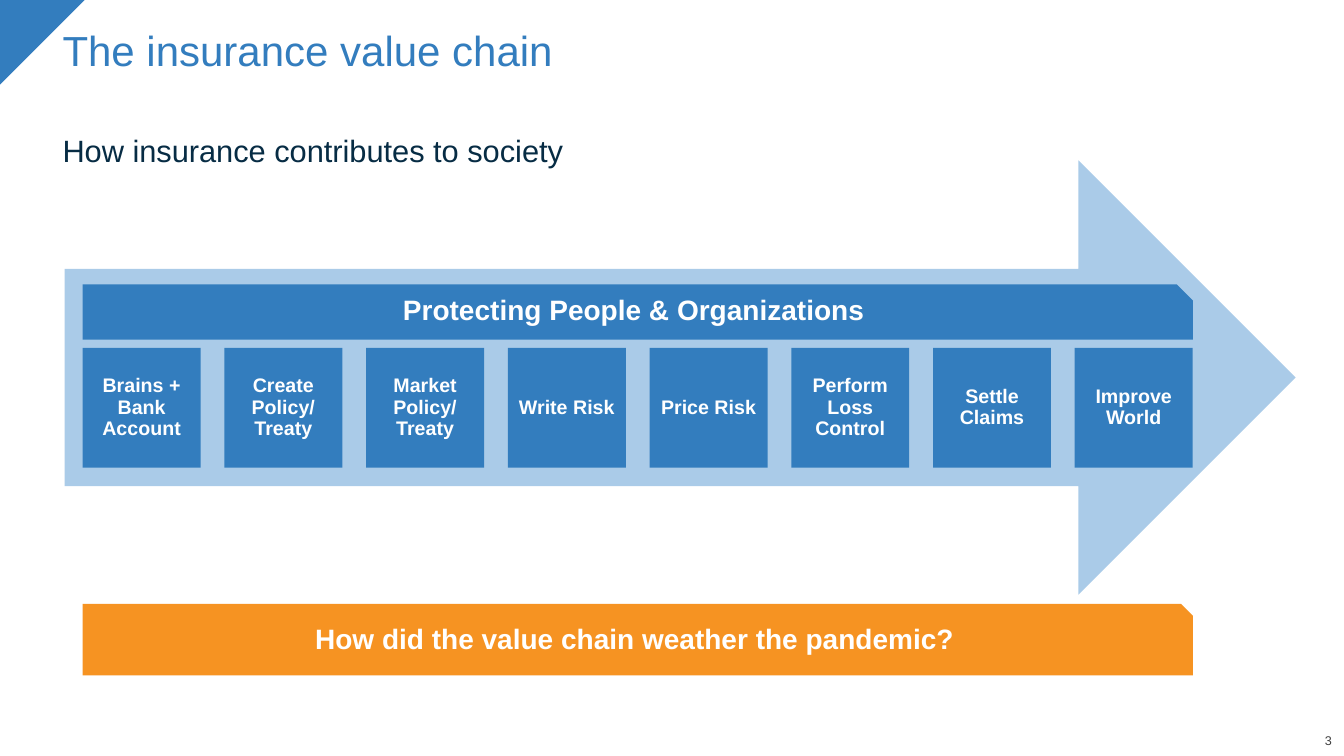
from pptx import Presentation
from pptx.dml.color import RGBColor
from pptx.enum.shapes import MSO_SHAPE as Shape
from pptx.enum.text import MSO_ANCHOR as Anchor, MSO_AUTO_SIZE as AutoSize, PP_ALIGN as Align
from pptx.oxml.ns import qn
from pptx.util import Inches, Pt

BLUE, PALE_BLUE, ORANGE = "337DBE", "AACBE8", "F69322"
NAVY, GREY, WHITE = "072C44", "404040", "FFFFFF"


def add_block(kind, left, top, width, height, color):
    block = slide.shapes.add_shape(
        kind, Inches(left), Inches(top), Inches(width), Inches(height))
    block.shadow.inherit = False
    block.fill.solid()
    block.fill.fore_color.rgb = RGBColor.from_string(color)
    block.line.fill.background()
    return block


def write(box, text, size, color, align, anchor, margins=(0.1, 0.05, 0.1, 0.05), bold=False):
    """Fill a box with one paragraph; margins run left, top, right, bottom."""
    frame = box.text_frame
    frame.text = text
    frame.word_wrap = True
    frame.auto_size = AutoSize.NONE
    frame.vertical_anchor = anchor
    (frame.margin_left, frame.margin_top,
     frame.margin_right, frame.margin_bottom) = map(Inches, margins)
    paragraph = frame.paragraphs[0]
    paragraph.alignment = align
    paragraph.line_spacing = 0.9
    paragraph.space_before = Pt(0)
    font = paragraph.runs[0].font
    font.name, font.size, font.bold = "Arial", Pt(size), bold
    font.color.rgb = RGBColor.from_string(color)


prs = Presentation()
prs.slide_width, prs.slide_height = Inches(13.33), Inches(7.5)
slide = prs.slides.add_slide(prs.slide_layouts[1])

# Corner and value chain arrow
corner = add_block(Shape.RIGHT_TRIANGLE, 0, 0, 0.84, 0.84, BLUE)
corner.rotation = 90
add_block(Shape.RIGHT_ARROW, 0.64, 1.59, 12.21, 4.31, PALE_BLUE)

# Title and subtitle
title, subtitle = slide.shapes.title, slide.placeholders[1]
headings = [
    (title, "The insurance value chain", 0.25, 1.04, 30, BLUE),
    (subtitle, "How insurance contributes to society", 1.3, 0.43, 22, NAVY),
]
for heading, text, top, height, size, color in headings:
    heading.left, heading.top = Inches(0.52), Inches(top)
    heading.width, heading.height = Inches(12.33), Inches(height)
    write(heading, text, size, color, Align.LEFT, Anchor.TOP)
subtitle_format = subtitle.text_frame.paragraphs[0]._p.get_or_add_pPr()
subtitle_format.set("marL", "0")
subtitle_format.set("indent", "0")
subtitle_format.append(subtitle_format.makeelement(qn("a:buNone"), {}))

# Banners
CHAIN_LEFT, CHAIN_WIDTH = 0.82, 11.01
question = add_block(Shape.SNIP_1_RECTANGLE, CHAIN_LEFT, 5.99, CHAIN_WIDTH, 0.71, ORANGE)
write(question, "How did the value chain weather the pandemic?", 20, WHITE,
      Align.CENTER, Anchor.MIDDLE, (0.1, 0.05, 0.1, 0.1), bold=True)
purpose = add_block(Shape.SNIP_1_RECTANGLE, CHAIN_LEFT, 2.82, CHAIN_WIDTH, 0.55, BLUE)
purpose.adjustments[0] = 0.29
write(purpose, "Protecting People & Organizations", 20, WHITE,
      Align.CENTER, Anchor.MIDDLE, (0.2, 0.1, 0.2, 0.2), bold=True)

# Steps, spread evenly under the upper banner
steps = ["Brains + Bank Account", "Create Policy/ Treaty", "Market Policy/ Treaty",
         "Write Risk", "Price Risk", "Perform Loss Control", "Settle Claims",
         "Improve World"]
STEP_WIDTH = 1.17
step_pitch = (CHAIN_WIDTH - STEP_WIDTH) / (len(steps) - 1)
for index, step in enumerate(steps):
    step_box = add_block(Shape.RECTANGLE, CHAIN_LEFT + index * step_pitch, 3.45,
                         STEP_WIDTH, 1.19, BLUE)
    write(step_box, step, 14, WHITE, Align.CENTER, Anchor.MIDDLE, bold=True)

# Page number
page_number = slide.shapes.add_textbox(
    Inches(12.57), Inches(7.29), Inches(0.64), Inches(0.13))
write(page_number, "3", 9, GREY, Align.RIGHT, Anchor.BOTTOM, (0, 0, 0, 0))

prs.save("out.pptx")
